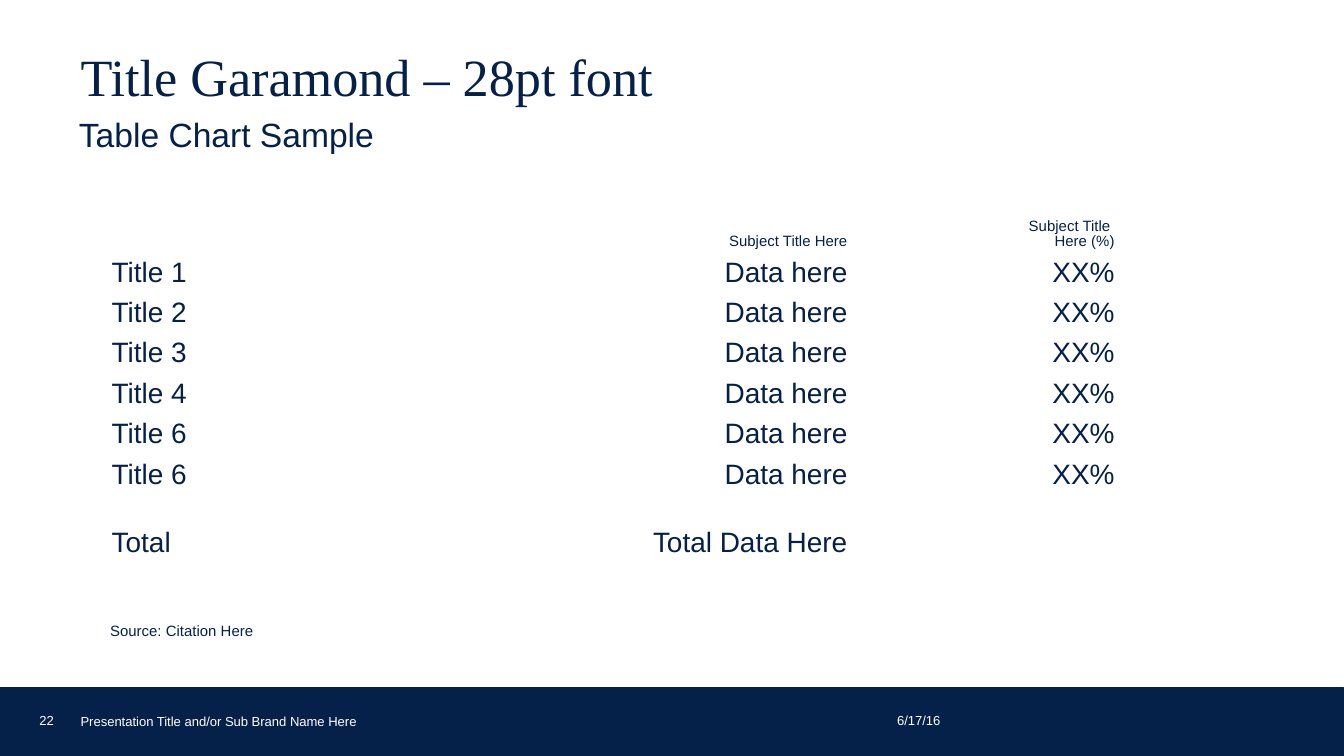
import pptx
import pptx.util
import pptx.dml.color
import pptx.enum.shapes
import pptx.enum.text
import pptx.oxml
import pptx.oxml.ns

PX = 5715
NAVY, WHITE = "052049", "FFFFFF"
SANS, SERIF = "Arial", "Times New Roman"
ANCHOR = pptx.enum.text.MSO_ANCHOR
ALIGN = pptx.enum.text.PP_ALIGN


def px(*values):
    return [pptx.util.Emu(v * PX) for v in values]


def rgb(value):
    return pptx.dml.color.RGBColor.from_string(value)


def element(tag, attributes=""):
    return pptx.oxml.parse_xml(
        f'<a:{tag} {pptx.oxml.ns.nsdecls("a")} {attributes}/>')


def write(tf, text, size=8, font=SANS, color=NAVY, align=ALIGN.LEFT,
          spacing=0.9, anchor=ANCHOR.TOP):
    tf.word_wrap = True
    tf.vertical_anchor = anchor
    p = tf.paragraphs[0]
    p.text = text
    p.alignment = align
    p.line_spacing = spacing
    for r in p.runs:
        r.font.size = pptx.util.Pt(size)
        r.font.name = font
        r.font.bold = False
        r.font.color.rgb = rgb(color)
    for br in p._p.findall(pptx.oxml.ns.qn("a:br")):
        br.append(element("rPr", f'sz="{size * 100}"'))
    if not text:
        p._p.append(element("endParaRPr", f'sz="{size * 100}"'))
    return p


class Deck:
    def __init__(self, width, height):
        self.prs = pptx.Presentation()
        self.prs.slide_width, self.prs.slide_height = px(width, height)
        self.s = self.prs.slides.add_slide(self.prs.slide_layouts[1])
        self.s.background.fill.solid()
        self.s.background.fill.fore_color.rgb = rgb(WHITE)

    def bar(self, *box):
        sp = self.s.shapes.add_shape(
            pptx.enum.shapes.MSO_SHAPE.RECTANGLE, *px(*box))
        sp.shadow.inherit = False
        sp.fill.solid()
        sp.fill.fore_color.rgb = rgb(NAVY)
        sp.line.color.rgb = rgb(NAVY)
        sp.line.width = pptx.util.Pt(1.5)

    def placeholder(self, index, text, box, **style):
        sp = self.s.placeholders[index]
        sp.left, sp.top, sp.width, sp.height = px(*box)
        sp.text_frame.auto_size = pptx.enum.text.MSO_AUTO_SIZE.NONE
        return write(sp.text_frame, text, **style)

    def label(self, text, box, **style):
        tf = self.s.shapes.add_textbox(*px(*box)).text_frame
        tf.margin_left = tf.margin_right = tf.margin_top = tf.margin_bottom = 0
        write(tf, text, **style)

    def table(self, rows, left, top, widths, heights):
        shape = self.s.shapes.add_table(
            len(rows), len(widths),
            *px(left, top, sum(widths), sum(heights)))
        table = shape.table
        table.first_row = table.horz_banding = False
        for column, width in zip(table.columns, px(*widths)):
            column.width = width
        for row, height in zip(table.rows, px(*heights)):
            row.height = height
        last = len(rows) - 1
        for i, row in enumerate(rows):
            for j, text in enumerate(row):
                cell = table.cell(i, j)
                cell.fill.background()
                cell.margin_left, cell.margin_right = px(16, 16)
                cell.margin_top, cell.margin_bottom = px(
                    40 if i == last else 6, 6)
                write(cell.text_frame, text, size=8 if i == 0 else 15,
                      align=ALIGN.RIGHT if j else ALIGN.LEFT)
                cell.vertical_anchor = ANCHOR.TOP if i else ANCHOR.BOTTOM


def main():
    d = Deck(1600, 900)
    d.bar(0, 820, 1600, 80)
    d.placeholder(0, "Title Garamond – 28pt font", (80, 56, 1414, 99),
                  size=28, font=SERIF, spacing=0.85)
    p = d.placeholder(1, "Table Chart Sample", (78, 133, 1413, 50), size=18)
    p.space_before = pptx.util.Pt(10)
    pPr = p._p.get_or_add_pPr()
    pPr.set("marL", str(29 * PX))
    pPr.set("indent", str(-29 * PX))
    pPr.append(element("buNone"))

    footer = dict(size=7, color=WHITE, spacing=1.0, anchor=ANCHOR.BOTTOM)
    d.label("6/17/16", (1068, 846, 162, 21), **footer)
    d.label("Presentation Title and/or Sub Brand Name Here",
            (96, 850, 754, 18), **footer)
    d.label("22", (47, 846, 43, 21), **footer)

    rows = [("", "Subject Title Here", "Subject Title \vHere (%)")]
    rows += [(f"Title {n}", "Data here", "XX%") for n in (1, 2, 3, 4, 6, 6)]
    rows.append(("Total", "Total Data Here", ""))
    d.table(rows, 117, 253, (485, 423, 318), [48] * 7 + [85])
    d.label("Source: Citation Here", (131, 742, 266, 19))
    d.prs.save("out.pptx")


if __name__ == "__main__":
    main()
